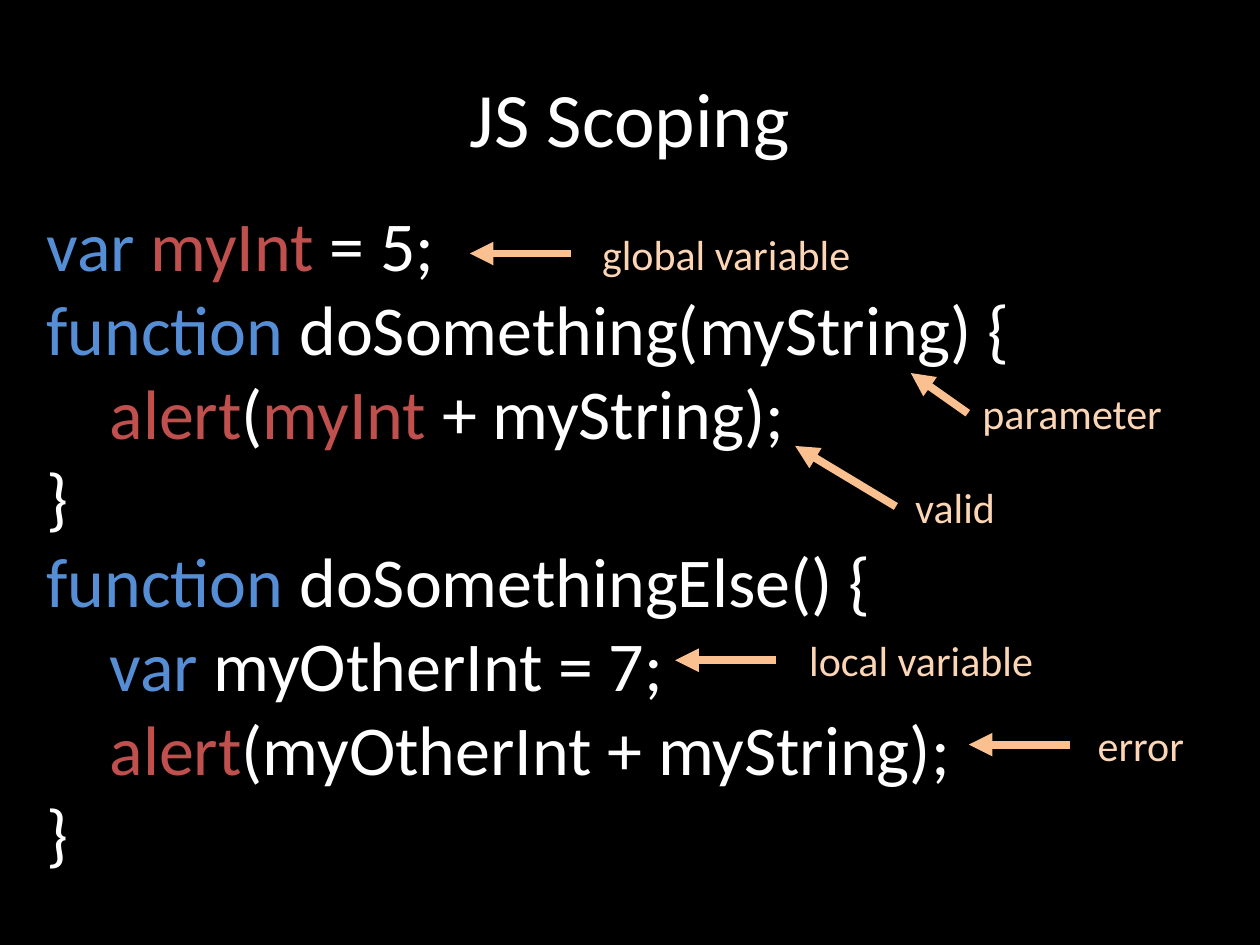
from lxml import etree
from pptx import Presentation
from pptx.dml.color import RGBColor
from pptx.enum.shapes import MSO_CONNECTOR
from pptx.enum.text import MSO_ANCHOR, MSO_AUTO_SIZE, PP_ALIGN
from pptx.oxml.ns import qn
from pptx.util import Cm, Pt

STRAIGHT = MSO_CONNECTOR.STRAIGHT
TOP, MIDDLE = MSO_ANCHOR.TOP, MSO_ANCHOR.MIDDLE
LEFT, CENTER = PP_ALIGN.LEFT, PP_ALIGN.CENTER
FIT_SHAPE = MSO_AUTO_SIZE.SHAPE_TO_FIT_TEXT

BLACK, WHITE = "000000", "FFFFFF"
KEYWORD, GLOBAL = "558ED5", "C0504D"
NOTE, ARROW = "FCD5B5", "FAC090"

CODE = [
    [("var ", KEYWORD), ("myInt", GLOBAL), (" = 5;", WHITE)],
    [("function ", KEYWORD), ("doSomething(myString) {", WHITE)],
    [("\talert", GLOBAL), ("(", WHITE), ("myInt", GLOBAL), (" + myString);", WHITE)],
    [("}", WHITE)],
    [("function ", KEYWORD), ("doSomethingElse() {", WHITE)],
    [("\tvar ", KEYWORD), ("myOtherInt = 7;", WHITE)],
    [("\talert", GLOBAL), ("(myOtherInt + myString);", WHITE)],
    [("}", WHITE)],
]

NOTES = [
    ("global variable", 11.86, 5.56, (11.51, 5.11), (9.47, 5.11)),
    ("local variable", 16.03, 5.08, (15.65, 13.31), (13.61, 13.31)),
    ("error", 21.87, 2.26, (21.56, 15.01), (19.53, 15.01)),
    ("parameter", 19.53, 4.17, (19.51, 8.33), (18.36, 7.52)),
    ("valid", 18.19, 2.13, (18.06, 10.21), (16.03, 8.99)),
]


def color(value):
    return RGBColor.from_string(value)


class ScopingSlide:
    font = "Calibri"
    tab_width = Cm(1.27)
    note_height = 1.27
    arrow_width = Pt(4.5)

    def __init__(self, page):
        self.page = page
        fill = page.background.fill
        fill.solid()
        fill.fore_color.rgb = color(BLACK)

    def text(self, lines, left, top, width, height, size,
             align=LEFT, anchor=TOP, wrap=True):
        box = self.page.shapes.add_textbox(Cm(left), Cm(top), Cm(width), Cm(height))
        frame = box.text_frame
        frame.word_wrap = wrap
        frame.vertical_anchor = anchor
        if anchor == TOP:
            frame.auto_size = FIT_SHAPE
        for index, spans in enumerate(lines):
            para = frame.add_paragraph() if index else frame.paragraphs[0]
            para.alignment = align
            for words, tint in spans:
                span = para.add_run()
                span.text = words
                span.font.name = self.font
                span.font.size = Pt(size)
                span.font.color.rgb = color(tint)
        return box

    def code(self, lines, left, top, width, height):
        box = self.text(lines, left, top, width, height, 40)
        for para in box.text_frame.paragraphs:
            properties = para._p.get_or_add_pPr()
            tabs = etree.SubElement(properties, qn("a:tabLst"))
            etree.SubElement(tabs, qn("a:tab"), pos=str(self.tab_width), algn="l")

    def arrow(self, start, end):
        line = self.page.shapes.add_connector(
            STRAIGHT, *(Cm(value) for value in start + end))
        line.line.color.rgb = color(ARROW)
        line.line.width = self.arrow_width
        properties = line._element.spPr
        etree.SubElement(properties.find(qn("a:ln")), qn("a:tailEnd"), type="triangle")
        etree.SubElement(properties, qn("a:effectLst"))

    def note(self, words, left, width, start, end):
        top = start[1] - self.note_height / 2
        self.text([[(words, NOTE)]], left, top, width, self.note_height, 24,
                  align=CENTER, wrap=False)
        self.arrow(start, end)


def main():
    deck = Presentation()
    deck.slide_width, deck.slide_height = Cm(25.4), Cm(19.05)
    slide = ScopingSlide(deck.slides.add_slide(deck.slide_layouts[6]))
    slide.text([[("JS Scoping", WHITE)]], 1.27, 0.76, 22.86, 3.18, 44,
               align=CENTER, anchor=MIDDLE)
    slide.code(CODE, 0.69, 3.94, 24.08, 13.94)
    for note in NOTES:
        slide.note(*note)
    deck.save("out.pptx")


if __name__ == "__main__":
    main()
